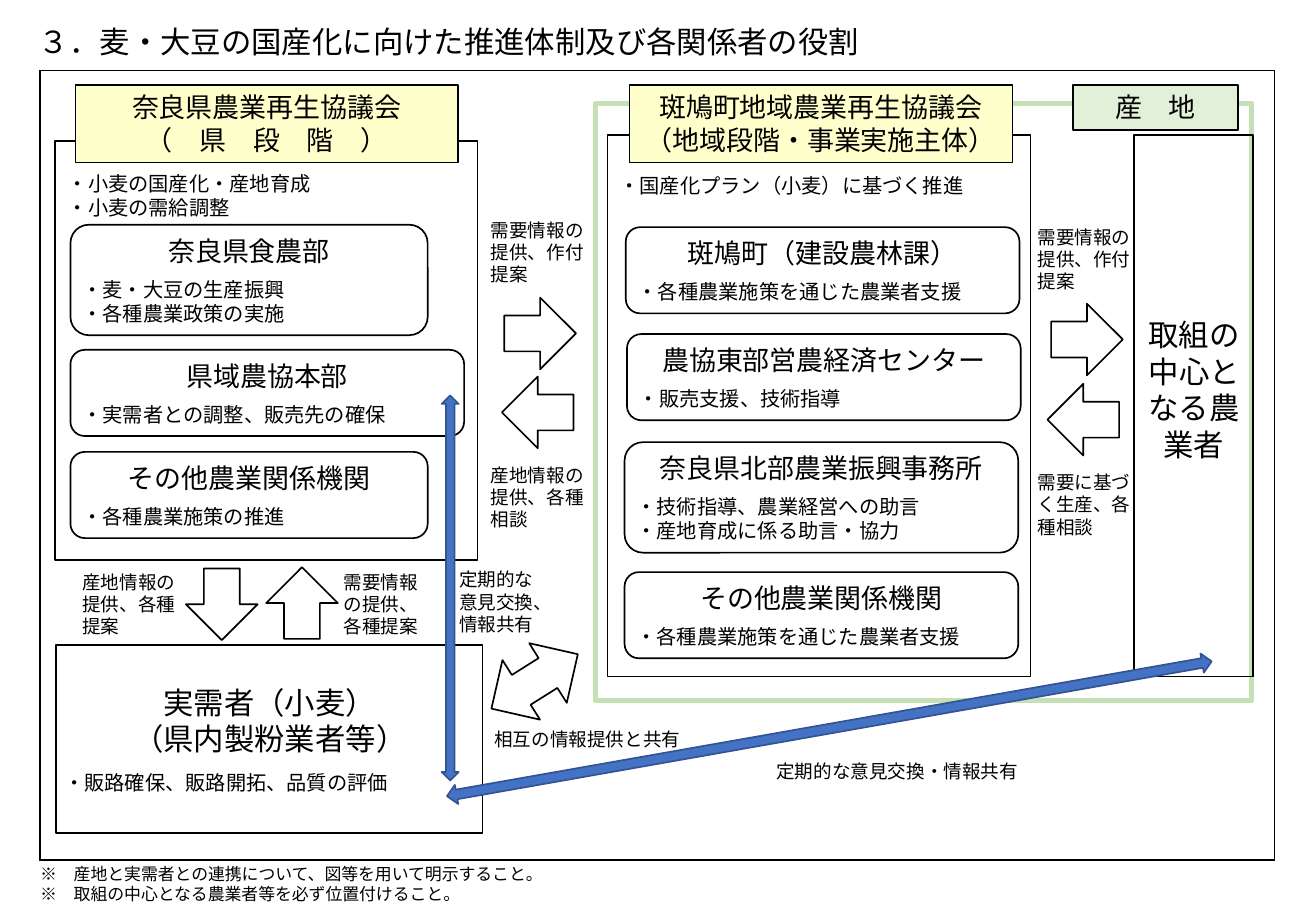
from lxml import etree
from pptx import Presentation
from pptx.dml.color import RGBColor
from pptx.enum.lang import MSO_LANGUAGE_ID
from pptx.enum.shapes import MSO_SHAPE
from pptx.enum.text import MSO_ANCHOR, MSO_AUTO_SIZE, PP_ALIGN
from pptx.oxml.ns import qn
from pptx.util import Pt

JAPANESE = MSO_LANGUAGE_ID.JAPANESE
RECT = MSO_SHAPE.RECTANGLE
PROCESS = MSO_SHAPE.FLOWCHART_PROCESS
ROUNDED = MSO_SHAPE.FLOWCHART_ALTERNATE_PROCESS
ONE_WAY = MSO_SHAPE.RIGHT_ARROW
TWO_WAY = MSO_SHAPE.LEFT_RIGHT_ARROW
TOP, MIDDLE = MSO_ANCHOR.TOP, MSO_ANCHOR.MIDDLE
LEFT, CENTER = PP_ALIGN.LEFT, PP_ALIGN.CENTER
FIXED = MSO_AUTO_SIZE.NONE
PX = 9144

THEME = {
    "black": "000000", "white": "FFFFFF", "council": "FFFFCC",
    "region": "E2F0D9", "region_line": "C5E0B4",
    "exchange": "4472C4", "exchange_line": "325491",
    "font": "Calibri", "note_font": "Noto Sans CJK JP",
    "title": 18, "heading": 16, "body": 12, "label": 11, "note": 10,
}


def write(holder, lines, size, align=LEFT, anchor=TOP, font=THEME["font"]):
    frame = holder.text_frame
    for attribute, value in {"word_wrap": True, "auto_size": FIXED, "vertical_anchor": anchor,
                             "margin_left": 10 * PX, "margin_right": 10 * PX,
                             "margin_top": 5 * PX, "margin_bottom": 5 * PX}.items():
        setattr(frame, attribute, value)
    for index, line in enumerate(lines):
        paragraph = frame.paragraphs[0] if index == 0 else frame.add_paragraph()
        for attribute, value in {"alignment": align, "space_before": Pt(0),
                                 "space_after": Pt(0)}.items():
            setattr(paragraph, attribute, value)
        run = paragraph.add_run()
        run.text = line
        for attribute, value in {"name": font, "size": Pt(THEME[size]), "bold": False,
                                 "language_id": JAPANESE}.items():
            setattr(run.font, attribute, value)
        run.font.color.rgb = RGBColor.from_string(THEME["black"])
        east_asian = etree.SubElement(run.font._element, qn("a:ea"))
        east_asian.set("typeface", font)


def draw(parent, kind, box, fill=None, line="black", width=1, rotation=0):
    shape = parent.add_shape(kind, *[value * PX for value in box])
    shape.shadow.inherit = False
    shape.rotation = rotation
    if fill:
        shape.fill.solid()
        shape.fill.fore_color.rgb = RGBColor.from_string(THEME[fill])
    else:
        shape.fill.background()
    shape.line.color.rgb = RGBColor.from_string(THEME[line])
    shape.line.width = Pt(width)
    return shape


deck = Presentation()
deck.slide_width, deck.slide_height = 1083 * PX, 750 * PX
slide = deck.slides.add_slide(deck.slide_layouts[1])
shapes = slide.shapes

title, notes = slide.placeholders
for placeholder, box in ((title, (22, 14, 756, 40)), (notes, (23, 706, 1060, 44))):
    for attribute, value in zip(("left", "top", "width", "height"), box):
        setattr(placeholder, attribute, value * PX)
write(title, ["３．麦・大豆の国産化に向けた推進体制及び各関係者の役割"], "title",
      font=THEME["note_font"])
write(notes, ["※　産地と実需者との連携について、図等を用いて明示すること。",
              "※　取組の中心となる農業者等を必ず位置付けること。"], "note",
      font=THEME["note_font"])
for paragraph in notes.text_frame.paragraphs:
    properties = paragraph._p.get_or_add_pPr()
    properties.set("marL", "0")
    properties.set("indent", "0")
    etree.SubElement(properties, qn("a:buNone"))

outline = shapes.add_table(1, 1, 33 * PX, 58 * PX, 1016 * PX, 650 * PX).table
outline.first_row = outline.horz_banding = False
outline_cell = outline.cell(0, 0)
cell_properties = outline_cell._tc.get_or_add_tcPr()
for side in ("lnL", "lnR", "lnT", "lnB"):
    border = etree.SubElement(cell_properties, qn(f"a:{side}"), w=str(Pt(1)))
    border_fill = etree.SubElement(border, qn("a:solidFill"))
    etree.SubElement(border_fill, qn("a:srgbClr"), val=THEME["black"])
outline_cell.fill.background()

draw(shapes, PROCESS, (490, 85, 492 + 48, 492), line="region_line", width=3)
for area in ((933, 111, 98, 446), (45, 116, 348, 345), (500, 111, 348, 446), (46, 531, 351, 155)):
    draw(shapes, PROCESS, area)

cards = [
    ((58, 185, 294, 91), "奈良県食農部", ["・麦・大豆の生産振興", "・各種農業政策の実施"]),
    ((58, 288, 324, 71), "県域農協本部", ["・実需者との調整、販売先の確保"]),
    ((58, 372, 294, 71), "その他農業関係機関", ["・各種農業施策の推進"]),
    ((515, 187, 324, 71), "斑鳩町（建設農林課）", ["・各種農業施策を通じた農業者支援"]),
    ((516, 275, 324, 71), "農協東部営農経済センター", ["・販売支援、技術指導"]),
    ((514, 364, 324, 91), "奈良県北部農業振興事務所",
     ["・技術指導、農業経営への助言", "・産地育成に係る助言・協力"]),
    ((514, 471, 324, 71), "その他農業関係機関", ["・各種農業施策を通じた農業者支援"]),
]
for (left, top, width, height), organization, duties in cards:
    card = shapes.add_group_shape().shapes
    draw(card, ROUNDED, (left, top, width, height))
    heading = card.add_textbox(left * PX, (top + 3) * PX, width * PX, 37 * PX)
    write(heading, [organization], "heading", CENTER)
    duty_list = card.add_textbox(left * PX, (top + 38) * PX, width * PX, (height - 41) * PX)
    write(duty_list, duties, "body")

for left, top, rotation in ((415, 245, 0), (413, 310, 180), (153, 468, 90),
                            (865, 250, 0), (862, 316, 180), (219, 467, 270)):
    draw(shapes, ONE_WAY, (left, top, 59, 59), rotation=rotation)
draw(shapes, TWO_WAY, (398, 532, 84, 58), fill="white", rotation=327.8)

councils = [
    ((62, 70, 315, 64), "council", ["奈良県農業再生協議会", "（　県　段　階　）"]),
    ((518, 70, 315, 64), "council", ["斑鳩町地域農業再生協議会", "（地域段階・事業実施主体）"]),
    ((883, 70, 136, 37), "region", ["産　地"]),
]
for box, fill, names in councils:
    write(draw(shapes, RECT, box, fill, width=0.75), names, "heading", CENTER)

for box, rotation in (((212, 477, 317, 14), 270), ((363, 592, 639, 16), 350)):
    draw(shapes, TWO_WAY, box, "exchange", "exchange_line", rotation=rotation)

captions = [
    ((934, 255, 97, 131), "title", CENTER, MIDDLE, ["取組の中心となる農業者"]),
    ((47, 558, 350, 71), "title", CENTER, TOP, ["実需者（小麦）", "（県内製粉業者等）"]),
    ((43, 629, 355, 30), "body", LEFT, TOP, ["・販路確保、販路開拓、品質の評価"]),
    ((500, 138, 351, 30), "body", LEFT, TOP, ["・国産化プラン（小麦）に基づく推進"]),
    ((46, 136, 347, 50), "body", LEFT, TOP, ["・小麦の国産化・産地育成", "・小麦の需給調整"]),
    ((394, 175, 106, 66), "label", LEFT, TOP, ["需要情報の提供、作付提案"]),
    ((394, 377, 106, 66), "label", LEFT, TOP, ["産地情報の提供、各種相談"]),
    ((844, 181, 106, 66), "label", LEFT, TOP, ["需要情報の提供、作付提案"]),
    ((844, 383, 106, 66), "label", LEFT, TOP, ["需要に基づく生産、各種相談"]),
    ((273, 465, 87, 66), "label", LEFT, TOP, ["需要情報の提供、各種提案"]),
    ((58, 465, 106, 66), "label", LEFT, TOP, ["産地情報の提供、各種提案"]),
    ((629, 621, 255, 29), "label", LEFT, TOP, ["定期的な意見交換・情報共有"]),
    ((368, 463, 255, 66), "label", LEFT, TOP, ["定期的な", "意見交換、", "情報共有"]),
    ((397, 594, 255, 29), "label", LEFT, TOP, ["相互の情報提供と共有"]),
]
for box, size, align, anchor, lines in captions:
    caption = shapes.add_textbox(*[value * PX for value in box])
    write(caption, lines, size, align, anchor)

deck.save("out.pptx")
